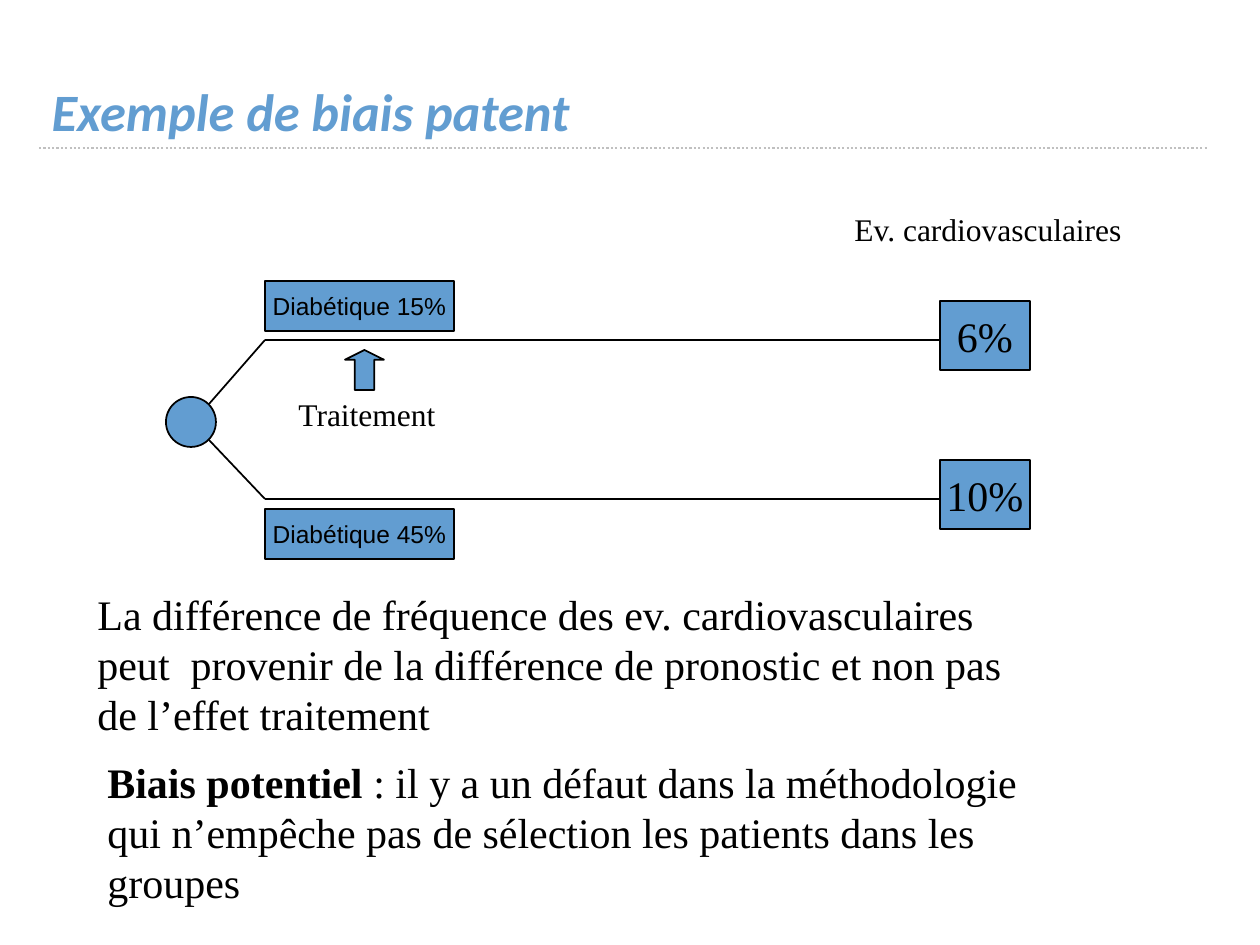
"""Build the slide on patent bias: two arms, their outcomes and a comment."""
from lxml import etree
from pptx import Presentation
from pptx import util as u
from pptx.dml.color import RGBColor
from pptx.enum import dml, shapes, text
from pptx.oxml.ns import qn

SCALE = 914400 / 126
HUES = {"blue": "629DD1", "ink": "000000", "rule": "C0C0C0"}
SERIF = "Times New Roman"
KIND = shapes.MSO_SHAPE


def px(*vals):
    """Turn pixel lengths into EMU."""
    return [u.Emu(round(v * SCALE)) for v in vals]


def hue(name):
    """Return a named colour."""
    return RGBColor.from_string(HUES[name])


def style(item, **fmt):
    """Set each format value on an item."""
    for key, val in fmt.items():
        setattr(item, key, val)


def write(shape, runs, size, face, tint="ink", align=None, **frame):
    """Fill a shape with one paragraph of (words, format) runs."""
    style(shape.text_frame, **frame)
    para = shape.text_frame.paragraphs[0]
    para.alignment = align
    for words, fmt in runs:
        run = para.add_run()
        run.text = words
        style(run.font, size=u.Pt(size), name=face, **fmt)
        run.font.color.rgb = hue(tint)


def line(slide, start, end, tint="ink", width=1, dash=None):
    """Draw a straight line between two points."""
    link = slide.shapes.add_connector(
        shapes.MSO_CONNECTOR.STRAIGHT, *px(*start, *end))
    link.line.color.rgb = hue(tint)
    style(link.line, width=u.Pt(width), dash_style=dash)
    etree.SubElement(link._element.spPr, qn("a:effectLst"))


def block(slide, kind, box):
    """Draw a blue shape with a black outline."""
    shape = slide.shapes.add_shape(kind, *px(*box))
    shape.shadow.inherit = False
    shape.fill.solid()
    shape.fill.fore_color.rgb = hue("blue")
    shape.line.color.rgb = hue("ink")
    shape.line.width = u.Pt(1)
    return shape


def label(slide, box, words, size, face):
    """Draw a blue rectangle with centred words."""
    write(block(slide, KIND.RECTANGLE, box), [(words, {})], size, face,
          align=text.PP_ALIGN.CENTER, word_wrap=False,
          vertical_anchor=text.MSO_ANCHOR.MIDDLE)


def note(slide, box, runs, size, wrap=True, align=None):
    """Add a free text box."""
    write(slide.shapes.add_textbox(*px(*box)), runs, size, SERIF,
          align=align, word_wrap=wrap,
          auto_size=text.MSO_AUTO_SIZE.SHAPE_TO_FIT_TEXT)


def head(slide, words):
    """Place the title above its dotted rule."""
    title = slide.shapes.title
    style(title, **dict(zip(("left", "top", "width", "height"),
                            px(39, 32, 1168, 116))))
    write(title, [(words, {"bold": True, "italic": True})], 30, "Calibri",
          "blue", text.PP_ALIGN.LEFT,
          vertical_anchor=text.MSO_ANCHOR.BOTTOM)
    line(slide, (39, 148), (1207, 148), "rule", 1.25,
         dml.MSO_LINE.ROUND_DOT)


def arm(slide, y, fork, top, group, rate):
    """Draw one arm from the fork to its event rate."""
    line(slide, (209, fork), (265, y))
    line(slide, (265, y), (940, y))
    label(slide, (940, y - 39, 90, 69), rate, 24, SERIF)
    label(slide, (265, top, 189, 50), group, 14, "Arial")


def main():
    """Build and save the slide."""
    deck = Presentation()
    style(deck, slide_width=u.Inches(10), slide_height=u.Inches(7.5))
    slide = deck.slides.add_slide(deck.slide_layouts[5])
    head(slide, "Exemple de biais patent")
    arm(slide, 340, 404, 281, "Diabétique 15%", "6%")
    arm(slide, 499, 440, 509, "Diabétique 45%", "10%")
    block(slide, KIND.OVAL, (166, 397, 50, 50))
    arrow = block(slide, KIND.UP_ARROW, (345, 350, 39, 40))
    arrow.adjustments[1] = 0.25
    note(slide, (842, 204, 295, 50), [("Ev. cardiovasculaires", {})], 18, False)
    note(slide, (285, 389, 164, 50), [("Traitement", {})], 18, False,
         text.PP_ALIGN.CENTER)
    note(slide, (85, 582, 975, 164), [(
        "La différence de fréquence des ev. cardiovasculaires peut  provenir "
        "de la différence de pronostic et non pas de l’effet traitement",
        {})], 24)
    note(slide, (95, 750, 942, 164), [
        ("Biais potentiel", {"bold": True}),
        (" : il y a un défaut dans la méthodologie qui n’empêche pas de "
         "sélection les patients dans les groupes", {})], 24)
    deck.save("out.pptx")


if __name__ == "__main__":
    main()
